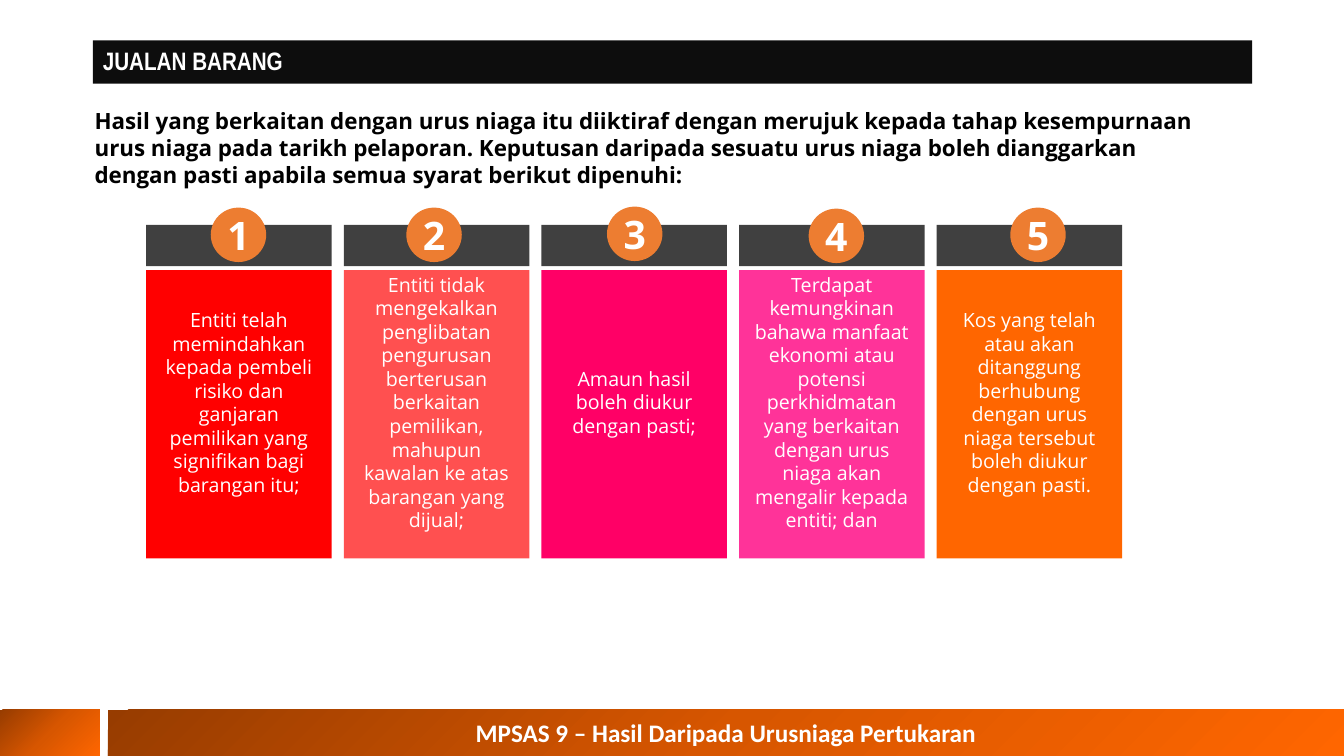
"""Build the slide on revenue conditions for the sale of goods."""
from copy import deepcopy
from pptx import Presentation
from pptx.dml.color import RGBColor
from pptx.enum.shapes import MSO_SHAPE as Kind
from pptx.enum.text import MSO_ANCHOR as Anchor, MSO_AUTO_SIZE as Fit, PP_ALIGN as Align
from pptx.util import Pt

PX = 9144
WHITE = "FFFFFF"
RAMP = ["973C00", "D75600", "FF6600"]
CARDS = [
    ("FF0000", 209, 206, "Entiti telah memindahkan kepada pembeli risiko dan ganjaran "
     "pemilikan yang signifikan bagi barangan itu;"),
    ("FF5050", 403, 206, "Entiti tidak mengekalkan penglibatan pengurusan berterusan "
     "berkaitan pemilikan, mahupun kawalan ke atas barangan yang dijual;"),
    ("FF0066", 602, 205, "Amaun hasil boleh diukur dengan pasti;"),
    ("FF3399", 802, 207, "Terdapat kemungkinan bahawa manfaat ekonomi atau potensi "
     "perkhidmatan yang berkaitan dengan urus niaga akan mengalir kepada entiti; dan"),
    ("FF6600", 1002, 206, "Kos yang telah atau akan ditanggung berhubung dengan urus "
     "niaga tersebut boleh diukur dengan pasti."),
]


def paint(fill, color):
    """Set a solid fill or font colour from a hex string."""
    fill.solid()
    fill.fore_color.rgb = RGBColor.from_string(color)


def write(shape, text, font, size, color=WHITE, bold=True, align=Align.CENTER, **frame):
    """Put one formatted paragraph in a shape."""
    body = shape.text_frame
    base = {"word_wrap": True, "auto_size": Fit.NONE, "vertical_anchor": Anchor.MIDDLE}
    for key, value in {**base, **frame}.items():
        setattr(body, key, value)
    para = body.paragraphs[0]
    para.alignment = align
    run = para.add_run()
    run.text = text
    for key, value in {"name": font, "size": Pt(size), "bold": bold}.items():
        setattr(run.font, key, value)
    paint(run.font.fill, color)


deck = Presentation()
deck.slide_width, deck.slide_height = 1333 * PX, 750 * PX
slide = deck.slides.add_slide(deck.slide_layouts[5])
shapes = slide.shapes

title = shapes.title
for key, value in {"left": 92, "top": 40, "width": 1150, "height": 43}.items():
    setattr(title, key, value * PX)
paint(title.fill, "0D0D0D")
write(title, "JUALAN BARANG", "Arial Narrow", 18, align=Align.LEFT)
title.text_frame.paragraphs[0].line_spacing = 0.9

intro = shapes.add_textbox(84 * PX, 106 * PX, 1134 * PX, 81 * PX)
write(intro, "Hasil yang berkaitan dengan urus niaga itu diiktiraf dengan merujuk kepada "
      "tahap kesempurnaan urus niaga pada tarikh pelaporan. Keputusan daripada sesuatu "
      "urus niaga boleh dianggarkan dengan pasti apabila semua syarat berikut dipenuhi:",
      "Open Sans", 16, "000000", align=Align.LEFT)

for i, (color, left, top, text) in enumerate(CARDS):
    x = 145 + 196 * i
    parts = []
    for kind, box, tone in [
        (Kind.RECTANGLE, (x, 268, 184, 286), color),
        (Kind.RECTANGLE, (x, 223, 184, 41), "404040"),
        (Kind.OVAL, (left, top, 55, 54), "ED7D31"),
    ]:
        part = shapes.add_shape(kind, *(n * PX for n in box))
        part.shadow.inherit = False
        part.line.fill.background()
        paint(part.fill, tone)
        parts.append(part)
    card, bar, disc = parts
    write(card, text, "Open Sans", 14, bold=False, margin_bottom=29 * PX)
    write(disc, str(i + 1), "Open Sans", 28, word_wrap=False,
          margin_left=0, margin_right=0, margin_top=0, margin_bottom=0)

for x, width in [(0, 99), (107, 1226)]:
    foot = shapes.add_shape(Kind.RECTANGLE, x * PX, 704 * PX, width * PX, 46 * PX)
    foot.shadow.inherit = False
    foot.line.fill.background()
    foot.fill.gradient()
    foot.fill.gradient_angle = 315
    first, last = foot.element.xpath(".//a:gs")
    first.addnext(deepcopy(last))
    for i, (stop, color) in enumerate(zip(foot.fill.gradient_stops, RAMP)):
        stop.position = i / 2
        stop.color.rgb = RGBColor.from_string(color)
write(foot, "MPSAS 9 – Hasil Daripada Urusniaga Pertukaran", "Calibri", 18)

deck.save("out.pptx")
